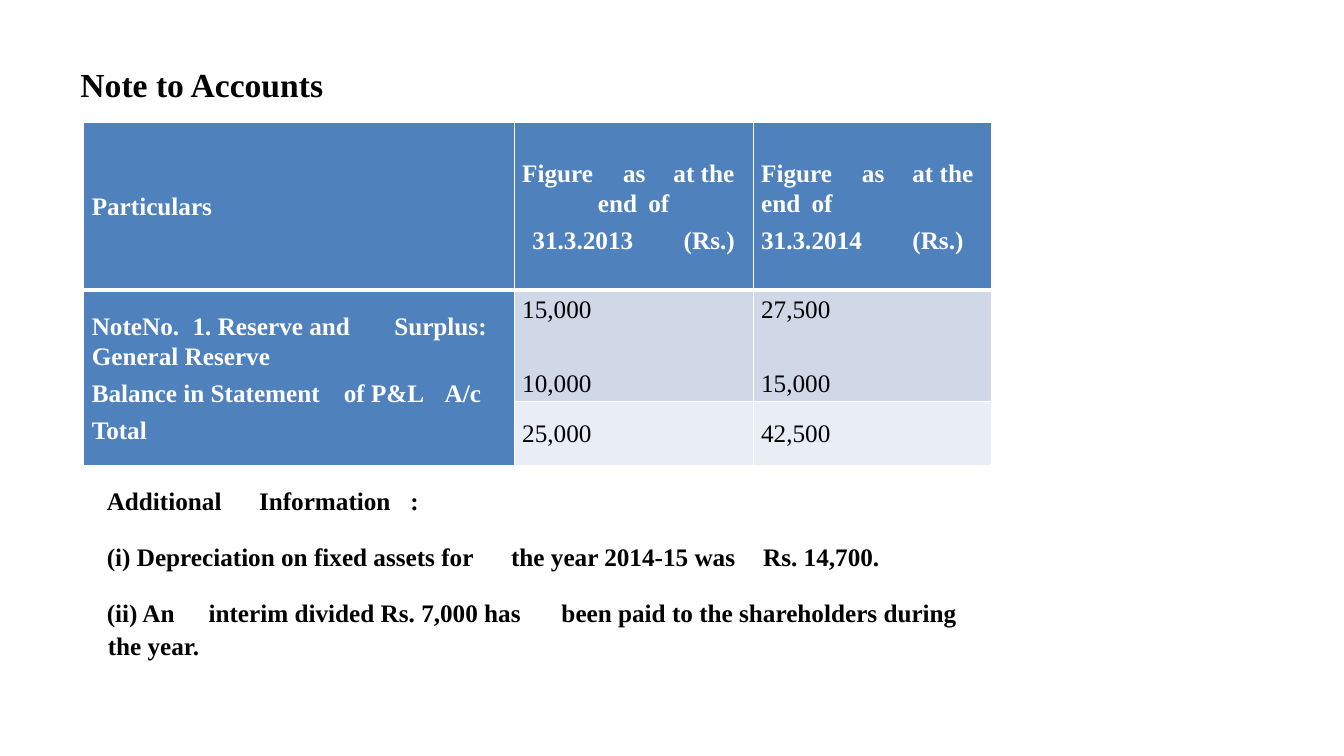
from dataclasses import dataclass

from lxml import etree
from pptx import Presentation, util as u
from pptx.dml import color
from pptx.enum import text
from pptx.oxml import ns


@dataclass(frozen=True)
class Theme:
    font: str = "Times New Roman"
    title_size: int = 24
    body_size: int = 18
    ink: str = "000000"
    white: str = "FFFFFF"
    header: str = "4F81BD"
    band_dark: str = "D0D8E8"
    band_light: str = "E9EDF4"


@dataclass(frozen=True)
class Style:
    size: int
    ink: str
    bold: bool = True
    spacing: float = 1.07
    after: float = 0
    last_after: float = 0
    align: text.PP_ALIGN = text.PP_ALIGN.LEFT
    hanging: bool = False


@dataclass(frozen=True)
class CellItem:
    row: int
    column: int
    lines: tuple[str, ...]
    style: Style
    fill: str


@dataclass(frozen=True)
class TextItem:
    left: float
    top: float
    width: float
    height: float
    lines: tuple[str, ...]
    style: Style
    wrap: bool
    anchor: text.MSO_ANCHOR


THEME = Theme()
WIDTH, HEIGHT = u.Inches(13.33), u.Inches(7.5)

# Positions are in hundredths of the slide's width and height
TABLE_LEFT, TABLE_TOP = 6.23, 16.13
COLUMNS = (32.03, 17.78, 17.78)
ROWS = (22.27, 14.67, 8.53)

TITLE = Style(THEME.title_size, THEME.ink, spacing=1)
HEADING = Style(THEME.body_size, THEME.white, after=5.2)
CENTERED = Style(THEME.body_size, THEME.white, after=5.2, align=text.PP_ALIGN.CENTER)
FIGURE = Style(THEME.body_size, THEME.ink, bold=False, after=31.5)
NOTE = Style(THEME.body_size, THEME.ink, after=17.2, last_after=17.2, hanging=True)

CELLS = (
    CellItem(0, 0, ("Particulars",), HEADING, THEME.header),
    CellItem(0, 1, ("Figure\tas\tat the\tend\tof", "31.3.2013\t(Rs.)"), CENTERED, THEME.header),
    CellItem(0, 2, ("Figure\tas\tat the end\tof", "31.3.2014\t(Rs.)"), HEADING, THEME.header),
    CellItem(1, 0, ("Note\tNo.\t1. Reserve and\tSurplus:\tGeneral Reserve",
                    "Balance in Statement\tof P&L\tA/c", "Total"), HEADING, THEME.header),
    CellItem(1, 1, ("15,000", "10,000"), FIGURE, THEME.band_dark),
    CellItem(1, 2, ("27,500", "15,000"), FIGURE, THEME.band_dark),
    CellItem(2, 1, ("25,000",), FIGURE, THEME.band_light),
    CellItem(2, 2, ("42,500",), FIGURE, THEME.band_light),
)

TEXTS = (
    TextItem(5.25, 7.73, 19.73, 6.67, ("Note to Accounts",), TITLE, False, text.MSO_ANCHOR.MIDDLE),
    TextItem(6.23, 63.2, 68.57, 24.93, (
        "Additional\tInformation\t:",
        "(i) Depreciation on fixed assets for\tthe year 2014-15 was\tRs. 14,700.",
        "(ii) An\tinterim divided Rs. 7,000 has\tbeen paid to the shareholders during the year.",
    ), NOTE, True, text.MSO_ANCHOR.TOP),
)


def across(share: float) -> int:
    return round(WIDTH * share / 100)


def down(share: float) -> int:
    return round(HEIGHT * share / 100)


def write(frame, lines: tuple[str, ...], style: Style) -> None:
    for index, line in enumerate(lines):
        para = frame.paragraphs[0] if index == 0 else frame.add_paragraph()
        para.add_run().text = line
        para.alignment = style.align
        para.line_spacing = style.spacing
        last = index == len(lines) - 1
        para.space_after = u.Pt(style.last_after if last else style.after)
        if style.hanging:
            properties = para._p.get_or_add_pPr()
            properties.set("marL", str(u.Inches(0.14)))
            properties.set("indent", str(u.Inches(-0.01)))
        para.font.name = THEME.font
        para.font.size = u.Pt(style.size)
        para.font.bold = style.bold
        para.font.color.rgb = color.RGBColor.from_string(style.ink)


def add_borders(cell, bottom: float) -> None:
    properties = cell._tc.get_or_add_tcPr()
    for side, weight in (("L", 1), ("R", 1), ("T", 1), ("B", bottom)):
        line = etree.SubElement(properties, ns.qn(f"a:ln{side}"), w=str(u.Pt(weight)))
        fill = etree.SubElement(line, ns.qn("a:solidFill"))
        etree.SubElement(fill, ns.qn("a:srgbClr"), val=THEME.white)


def add_accounts_table(page) -> None:
    table = page.shapes.add_table(
        len(ROWS), len(COLUMNS), across(TABLE_LEFT), down(TABLE_TOP),
        across(sum(COLUMNS)), down(sum(ROWS))).table
    table.first_row = table.horz_banding = False
    for column, share in zip(table.columns, COLUMNS):
        column.width = across(share)
    for row, share in zip(table.rows, ROWS):
        row.height = down(share)
    table.cell(1, 0).merge(table.cell(2, 0))

    for item in CELLS:
        cell = table.cell(item.row, item.column)
        cell.margin_left = cell.margin_right = u.Inches(0.08)
        cell.margin_top = cell.margin_bottom = 0
        cell.vertical_anchor = text.MSO_ANCHOR.MIDDLE
        add_borders(cell, bottom=3 if item.row == 0 else 1)
        cell.fill.solid()
        cell.fill.fore_color.rgb = color.RGBColor.from_string(item.fill)
        write(cell.text_frame, item.lines, item.style)


def add_text(page, item: TextItem) -> None:
    box = page.shapes.add_textbox(
        across(item.left), down(item.top), across(item.width), down(item.height))
    frame = box.text_frame
    frame.word_wrap = item.wrap
    frame.auto_size = text.MSO_AUTO_SIZE.SHAPE_TO_FIT_TEXT
    frame.vertical_anchor = item.anchor
    write(frame, item.lines, item.style)


def main() -> None:
    deck = Presentation()
    deck.slide_width, deck.slide_height = WIDTH, HEIGHT
    page = deck.slides.add_slide(deck.slide_layouts[6])

    # Table of reserves
    add_accounts_table(page)

    # Title and additional information
    for item in TEXTS:
        add_text(page, item)

    deck.save("out.pptx")


if __name__ == "__main__":
    main()
